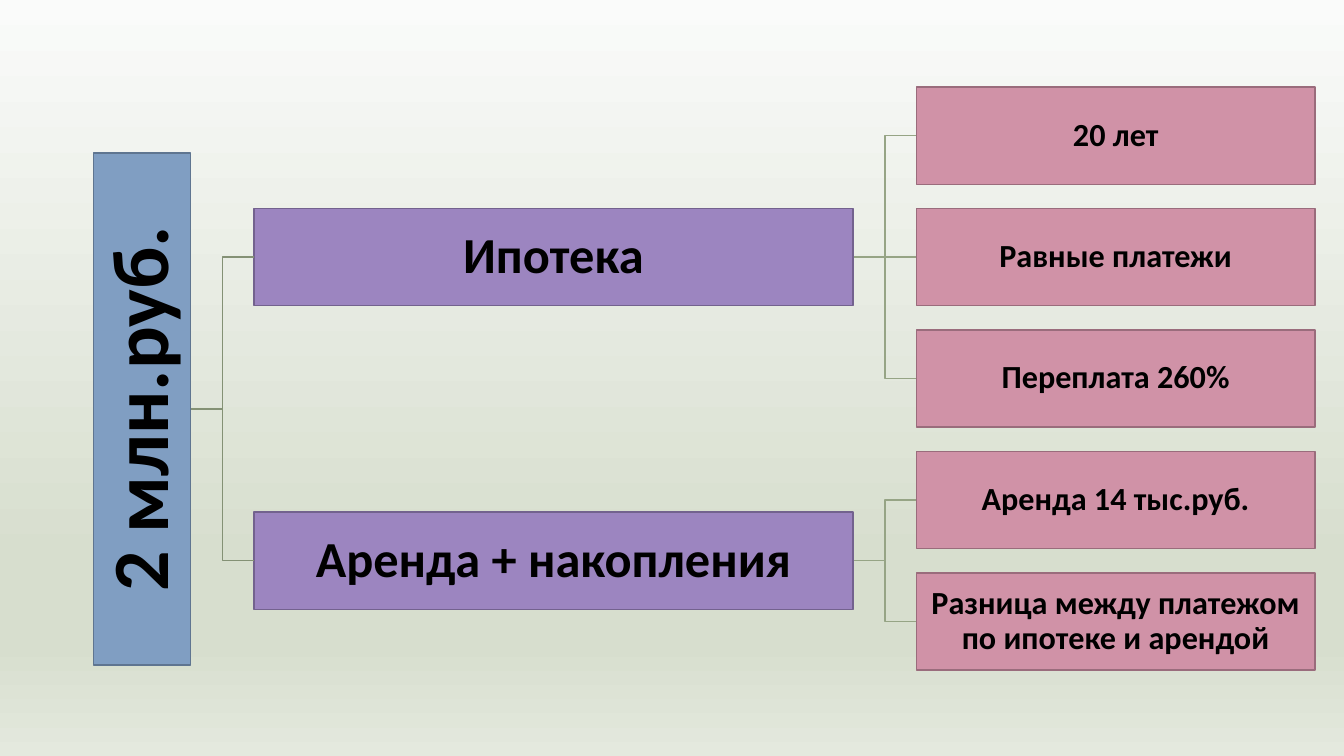
from copy import deepcopy

from lxml import etree
from pptx import Presentation
from pptx.dml.color import RGBColor
from pptx.enum import shapes, text
from pptx.oxml.ns import qn
from pptx.util import Cm, Pt

BLACK = RGBColor(0x00, 0x00, 0x00)
ROOT_FILL, ROOT_LINE = RGBColor(0x80, 0x9E, 0xC2), RGBColor(0x5F, 0x75, 0x90)
BRANCH_FILL, BRANCH_LINE = RGBColor(0x9C, 0x85, 0xC0), RGBColor(0x73, 0x62, 0x8E)
LEAF_FILL, LEAF_LINE = RGBColor(0xD0, 0x92, 0xA7), RGBColor(0x9A, 0x6C, 0x7C)
ROOT_LINK, BRANCH_LINK = RGBColor(0x84, 0x91, 0x75), RGBColor(0x96, 0xA4, 0x85)
BACKGROUND = [
    (0, RGBColor(0xFA, 0xFB, 0xFA)),
    (0.74, RGBColor(0xD7, 0xDE, 0xCE)),
    (0.85, RGBColor(0xD7, 0xDE, 0xCE)),
    (1, RGBColor(0xE4, 0xE9, 0xDE)),
]

# Lengths in centimetres
BOX_HEIGHT = 2.45
FIRST_ROW, ROW_PITCH = 3.42, 3.06
ROOT_LEFT, ROOT_LENGTH = 2.36, 12.9
BRANCH_LEFT, BRANCH_WIDTH = 6.4, 15.1
LEAF_LEFT, LEAF_WIDTH = 23.1, 10.04

TREE = [
    ("Ипотека", ["20 лет", "Равные платежи", "Переплата 260%"]),
    ("Аренда + накопления",
     ["Аренда 14 тыс.руб.", "Разница между платежом по ипотеке и арендой"]),
]

presentation = Presentation()
presentation.slide_width, presentation.slide_height = Cm(33.87), Cm(19.05)
slide = presentation.slides.add_slide(presentation.slide_layouts[6])

fill = slide.background.fill
fill.gradient()
fill.gradient_angle = 270
stop_list = next(slide.element.iter(qn("a:gsLst")))
for _ in BACKGROUND[2:]:
    stop_list.append(deepcopy(stop_list[0]))
for stop, (position, color) in zip(fill.gradient_stops, BACKGROUND):
    stop.position = position
    stop.color.rgb = color


def add_box(label, left, middle, width, fill_color, line_color, size, inset):
    """Add a labelled box whose vertical centre is at middle."""
    shape = slide.shapes.add_shape(
        shapes.MSO_SHAPE.RECTANGLE,
        Cm(left), Cm(middle - BOX_HEIGHT / 2), Cm(width), Cm(BOX_HEIGHT))
    shape.shadow.inherit = False
    shape.fill.solid()
    shape.fill.fore_color.rgb = fill_color
    shape.line.color.rgb = line_color
    shape.line.width = Pt(1)
    frame = shape.text_frame
    frame.word_wrap = True
    frame.vertical_anchor = text.MSO_ANCHOR.MIDDLE
    frame.margin_left = frame.margin_right = Cm(inset)
    frame.margin_top = frame.margin_bottom = Cm(inset)
    paragraph = frame.paragraphs[0]
    paragraph.text = label
    paragraph.alignment = text.PP_ALIGN.CENTER
    paragraph.line_spacing = 0.9
    paragraph.font.name = "Calibri"
    paragraph.font.size = Pt(size)
    paragraph.font.bold = True
    paragraph.font.color.rgb = BLACK
    return shape


def add_link(left, start, right, end, color):
    """Join two heights, with an elbow halfway unless they are level."""
    kind = shapes.MSO_CONNECTOR.ELBOW
    if abs(start - end) < 0.01:
        kind = shapes.MSO_CONNECTOR.STRAIGHT
    connector = slide.shapes.add_connector(kind, Cm(left), Cm(start), Cm(right), Cm(end))
    connector.line.color.rgb = color
    connector.line.width = Pt(1)
    etree.SubElement(connector.element.spPr, qn("a:effectLst"))


row = 0
branch_middles = []
for branch, leaves in TREE:
    leaf_middles = [FIRST_ROW + (row + i) * ROW_PITCH for i in range(len(leaves))]
    row += len(leaves)
    middle = sum(leaf_middles) / len(leaves)
    branch_middles.append(middle)
    for leaf, leaf_middle in zip(leaves, leaf_middles):
        add_link(BRANCH_LEFT + BRANCH_WIDTH, middle, LEAF_LEFT, leaf_middle, BRANCH_LINK)
        add_box(leaf, LEAF_LEFT, leaf_middle, LEAF_WIDTH, LEAF_FILL, LEAF_LINE, 23, 0.06)
    add_box(branch, BRANCH_LEFT, middle, BRANCH_WIDTH, BRANCH_FILL, BRANCH_LINE, 36, 0.08)

root_middle = sum(branch_middles) / len(branch_middles)
for middle in branch_middles:
    add_link(ROOT_LEFT + BOX_HEIGHT, root_middle, BRANCH_LEFT, middle, ROOT_LINK)
root_left = ROOT_LEFT + (BOX_HEIGHT - ROOT_LENGTH) / 2
root = add_box("2 млн.руб.", root_left, root_middle, ROOT_LENGTH, ROOT_FILL, ROOT_LINE, 57, 0.1)
root.rotation = 270

presentation.save("out.pptx")
